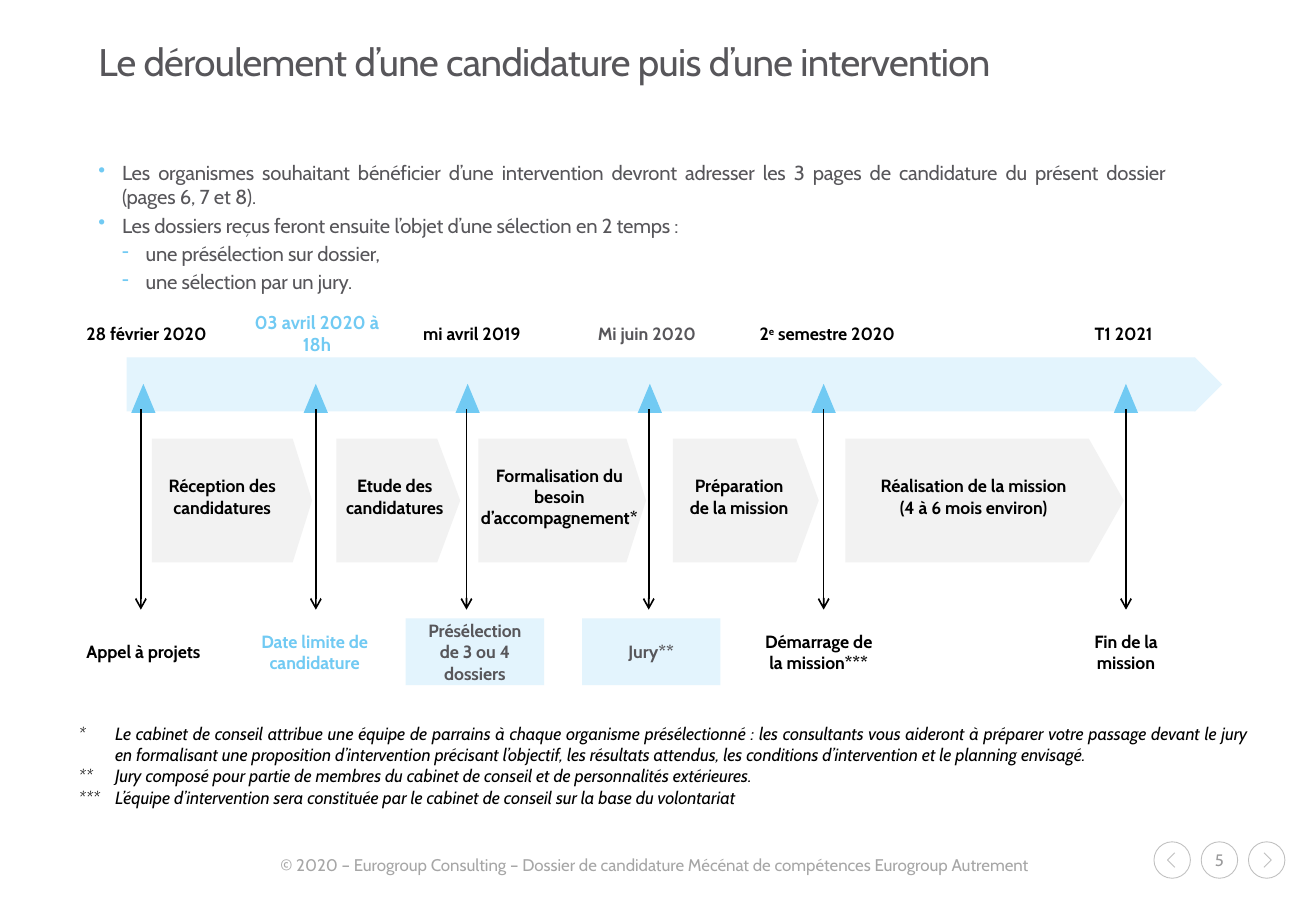
import pptx
import pptx.util
import pptx.dml.color
import pptx.enum.shapes
import pptx.enum.text
import pptx.oxml.ns
from lxml import etree

Pt = pptx.util.Pt
Shape = pptx.enum.shapes.MSO_SHAPE
Align = pptx.enum.text.PP_ALIGN
Anchor = pptx.enum.text.MSO_ANCHOR
qn = pptx.oxml.ns.qn

HUES = {
    "black": "000000", "text": "57565A", "sky": "71CAF3", "pale": "E3F4FD",
    "step": "F2F2F2", "ring": "BFBFBF", "page": "9A9A9B", "foot": "A6A6A6",
}
BOLD = {"size": Pt(10.5), "bold": True}
LATE = {"size": Pt(11), "bold": True}
NOTE = {"size": Pt(10.5), "italic": True}
MID = {"alignment": Align.CENTER}
JUST = {"alignment": Align.JUSTIFY}

DATES = [
    (85, 83.5, 86.8, 109, [["28 février 2020"]], "black"),
    (187.2, 187.2, 187.9, 91, [["03 avril 2020 à 18h"]], "sky"),
    (277.2, 276.5, 279.7, 96, [["mi avril 2019"]], "black"),
    (385.2, 384.5, 383.4, 96, [["Mi juin 2020"]], "text"),
    (488.2, 488.2, 490.3, 105, [["2", "^e", " semestre 2020"]], "black"),
    (667.4, 667.4, 666, 94, [["T1 2021"]], "black"),
]
GOALS = [
    (85, "Appel à projets", "black", None),
    (186.5, "Date limite de candidature", "sky", None),
    (281.5, "Présélection de 3 ou 4 dossiers", "text", "pale"),
    (386, "Jury**", "text", "pale"),
    (485.3, "Démarrage de la mission***", "black", None),
    (667.4, "Fin de la mission", "black", None),
]
STEPS = [
    (90, 95, 0.157, 90.7, 82, 7.2, [["Réception des candidatures"]]),
    (199.4, 73.4, 0.186, 201.6, 64.8, 0, [["Etude des candidatures"]]),
    (283.5, 99.4, 0.159, 284.4, 94.3, 0,
     [["Formalisation du besoin d’accompagnement*"]]),
    (398.9, 86.4, 0.183, 395.3, 85.7, 0, [["Préparation"], ["de la mission"]]),
    (501.1, 165, 0.283, 503.3, 147.6, 7.2,
     [["Réalisation de la mission"], ["(4 à 6 mois environ)"]]),
]
POINTS = [
    ("•", 14, "Les organismes souhaitant bénéficier d’une intervention devront "
     "adresser les 3 pages de candidature du présent dossier (pages 6, 7 et 8)."),
    ("•", 14, "Les dossiers reçus feront ensuite l’objet d’une sélection\u00a0en 2 temps :"),
    ("-", 28, "une présélection sur dossier,"),
    ("-", 28, "une sélection par un jury."),
]
NOTES = [
    ["*\tLe cabinet de conseil attribue une équipe de parrains à chaque organisme "
     "présélectionné : les consultants vous aideront à préparer votre passage "
     "devant le jury en formalisant une proposition d’intervention précisant "
     "l’objectif, les résultats attendus, les conditions d’intervention et le "
     "planning envisagé."],
    ["**\tJury composé pour partie de membres du cabinet de conseil et de "
     "personnalités extérieures."],
    ["***\tL’équipe d’intervention sera constituée par le cabinet de conseil sur "
     "la base du volontariat"],
]


def hue(name):
    return pptx.dml.color.RGBColor.from_string(HUES[name])


def apply(item, style):
    for key, value in style.items():
        setattr(item, key, value)


def write(frame, lines, color, font, para, pad=(7.2, 3.6), anchor=Anchor.MIDDLE,
          wrap=True, space=None):
    side, edge = map(Pt, pad)
    apply(frame, {
        "word_wrap": wrap, "vertical_anchor": anchor,
        "margin_left": side, "margin_right": side,
        "margin_top": edge, "margin_bottom": edge,
    })
    for spot, line in enumerate(lines):
        block = frame.add_paragraph() if spot else frame.paragraphs[0]
        apply(block, para)
        for part in line:
            run = block.add_run()
            run.text = part.lstrip("^")
            apply(run.font, {"name": "Cabin", **font})
            run.font.color.rgb = hue(color)
            mark = run.font._element
            if part.startswith("^"):
                mark.set("baseline", "30000")
            if space:
                mark.set("spc", str(space))


def label(slide, box, *words, **style):
    frame = slide.shapes.add_textbox(*map(Pt, box)).text_frame
    write(frame, *words, **style)
    return frame


def paint(shape, fill=None, line=None):
    shape.shadow.inherit = False
    if fill:
        shape.fill.solid()
        shape.fill.fore_color.rgb = hue(fill)
    else:
        shape.fill.background()
    if line:
        shape.line.color.rgb = hue(line)
        shape.line.width = Pt(0.5)
    else:
        shape.line.fill.background()
    return shape


def draw(slide, kind, box, fill=None, line=None, adjust=()):
    shape = slide.shapes.add_shape(kind, *map(Pt, box))
    for spot, value in enumerate(adjust):
        shape.adjustments[spot] = value
    return paint(shape, fill, line)


def arrow(slide, x, top, base):
    link = slide.shapes.add_connector(
        pptx.enum.shapes.MSO_CONNECTOR.STRAIGHT, Pt(x), Pt(top), Pt(x), Pt(base))
    link.line.color.rgb = hue("black")
    link.line.width = Pt(1)
    etree.SubElement(link.line._get_or_add_ln(), qn("a:tailEnd"), type="arrow")
    etree.SubElement(link._element.spPr, qn("a:effectLst"))


def indent(block, left, hang, sign=None):
    props = block._p.get_or_add_pPr()
    props.set("marL", str(Pt(left)))
    props.set("indent", str(Pt(-hang)))
    if sign:
        tint = etree.SubElement(props, qn("a:buClr"))
        etree.SubElement(tint, qn("a:srgbClr"), val=HUES["sky"])
        etree.SubElement(props, qn("a:buChar"), char=sign)


def head(slide):
    title = slide.shapes.title
    apply(title, dict(zip(("left", "top", "width", "height"),
                          map(Pt, (58.3, 25.2, 663, 26.6)))))
    title.text_frame.auto_size = pptx.enum.text.MSO_AUTO_SIZE.NONE
    write(title.text_frame, [["Le déroulement d’une candidature puis d’une intervention"]],
          "text", {"size": Pt(22.8)},
          {"alignment": Align.LEFT, "line_spacing": 0.86}, pad=(0, 0), space=-40)


def intro(slide):
    frame = label(slide, (58.3, 95, 633, 80), [[text] for _, _, text in POINTS],
                  "text", {"size": Pt(12)}, JUST,
                  pad=(0, 0), anchor=Anchor.TOP, space=-10)
    for spot, (block, (sign, left, _)) in enumerate(zip(frame.paragraphs, POINTS)):
        indent(block, left, 14, sign)
        if spot:
            block.space_before = Pt(2.4)


def chart(slide):
    draw(slide, Shape.RIGHT_ARROW, (75, 211.7, 649.4, 32.4), "pale", adjust=(0.988, 0.5))
    for left, width, tip, start, span, side, lines in STEPS:
        draw(slide, Shape.RIGHT_ARROW, (left, 260, width, 73.4), "step", adjust=(1, tip))
        label(slide, (start, 255, span, 78.5), lines, "black", BOLD, MID, pad=(side, 3.6))
    for peak, shaft, center, width, lines, color in DATES:
        draw(slide, Shape.ISOSCELES_TRIANGLE, (peak - 7.2, 227.5, 14.4, 17.3), "sky")
        arrow(slide, shaft, 242.6, 361.4)
        label(slide, (center - width / 2, 180.6, width, 34), lines, color,
              LATE if color == "sky" else BOLD, MID,
              pad=(7.2, 3.6 if color == "sky" else 6))
    for center, text, color, fill in GOALS:
        card = draw(slide, Shape.RECTANGLE, (center - 41, 366.5, 82, 39.6), fill)
        write(card.text_frame, [[text]], color, BOLD, MID)


def notes(slide):
    frame = label(slide, (39.6, 424.8, 707.8, 58.3), NOTES, "black", NOTE, JUST,
                  anchor=Anchor.TOP)
    for block in frame.paragraphs:
        indent(block, 21.6, 21.6)


def foot(slide):
    label(slide, (159.1, 503.3, 465.8, 19.4),
          [["© 2020 – Eurogroup Consulting – Dossier de candidature Mécénat de "
            "compétences Eurogroup Autrement"]],
          "foot", {"size": Pt(10)}, {}, anchor=Anchor.TOP, wrap=False)
    rings = [draw(slide, Shape.OVAL, (684 + 28 * spot, 499, 21.6, 21.6), line="ring")
             for spot in range(3)]
    write(rings[1].text_frame, [["5"]], "page", {"size": Pt(9.8)}, MID, pad=(0, 0))
    for base, tip in ((696.3, 692), (749.2, 753.5)):
        pen = slide.shapes.build_freeform(Pt(base), Pt(505.5))
        pen.add_line_segments([(Pt(tip), Pt(509.8)), (Pt(base), Pt(514.1))], close=False)
        paint(pen.convert_to_shape(), line="ring")


def main():
    deck = pptx.Presentation()
    deck.slide_width, deck.slide_height = Pt(780), Pt(540)
    slide = deck.slides.add_slide(deck.slide_layouts[5])
    for build in (head, intro, chart, notes, foot):
        build(slide)
    deck.save("out.pptx")


if __name__ == "__main__":
    main()
